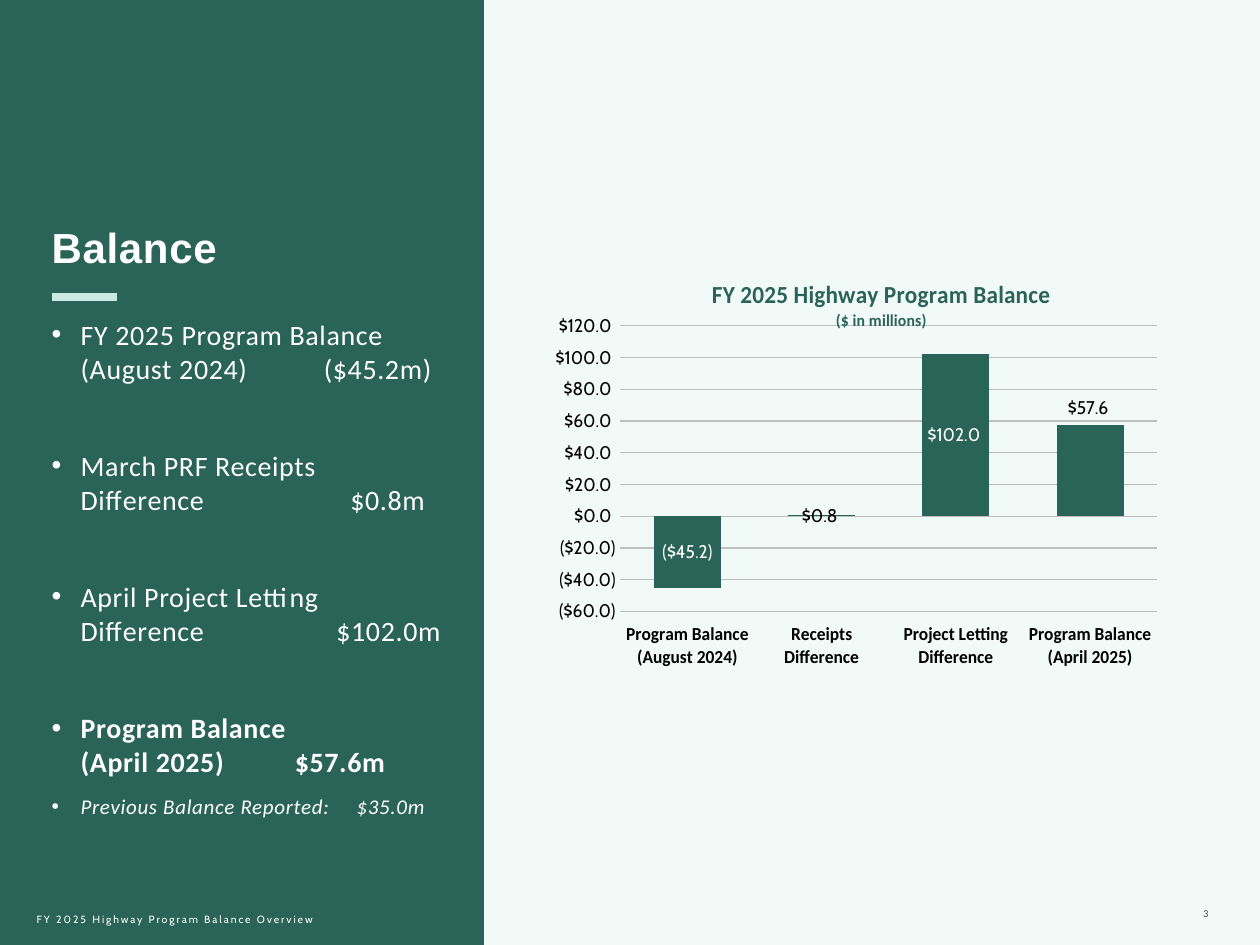
from dataclasses import dataclass
from lxml.etree import SubElement as Sub
from pptx import Presentation
from pptx.chart.data import CategoryChartData as Data
from pptx.dml.color import RGBColor as RGB
from pptx.enum.chart import XL_CHART_TYPE as Kind
from pptx.enum.chart import XL_LABEL_POSITION as Spot
from pptx.enum.chart import XL_TICK_LABEL_POSITION as Tick
from pptx.enum.chart import XL_TICK_MARK as Mark
from pptx.enum.shapes import MSO_CONNECTOR as Link
from pptx.enum.shapes import MSO_SHAPE as Form
from pptx.enum.text import MSO_ANCHOR as Anchor
from pptx.enum.text import MSO_AUTO_SIZE as Fit
from pptx.enum.text import PP_ALIGN as Align
from pptx.oxml import parse_xml
from pptx.oxml.ns import nsdecls, qn
from pptx.util import Inches, Pt


@dataclass(frozen=True)
class Theme:
    """Colours, fonts and type sizes of the slide."""
    green: RGB = RGB(0x2A, 0x63, 0x57)
    mint: RGB = RGB(0xCB, 0xE9, 0xE3)
    pale: RGB = RGB(0xF2, 0xFA, 0xF8)
    white: RGB = RGB(0xFF, 0xFF, 0xFF)
    black: RGB = RGB(0, 0, 0)
    gray: RGB = RGB(0xBF, 0xBF, 0xBF)
    dark: RGB = RGB(0x4D, 0x4D, 0x4F)
    head: str = "Arial"
    body: str = "Calibri"
    data: str = "Cabin"
    title: float = 24
    text: float = 16
    note: float = 12
    axis: float = 10.5
    small: float = 6
    main: float = 14
    sub: float = 9.5


T = Theme()
MONEY = r'"$"#,##0.0_);\("$"#,##0.0\)'
ROWS = [
    ("FY 2025 Program Balance\v(August 2024)\t($45.2m)", 2.16),
    ("March PRF Receipts\vDifference\t$0.8m", 2.37),
    ("April Project Letting\vDifference\t$102.0m", 2.26),
    ("Program Balance\v(April 2025)\t$57.6m", 1.93),
    ("Previous Balance Reported:\t$35.0m", 2.42),
]
BARS = {
    "Program Balance (August 2024)": -45.2,
    "Receipts Difference": 0.8,
    "Project Letting Difference": 102,
    "Program Balance (April 2025)": 57.6,
}


def style(font, name, size, color, bold=False):
    """Set the face, size, colour and weight of a font."""
    font.name, font.size, font.bold = name, Pt(size), bold
    font.color.rgb = color


def track(para, gap):
    """Set letter spacing of a paragraph in points."""
    para._p.pPr.find(qn("a:defRPr")).set("spc", str(round(gap * 100)))


def clear(frame, anchor, edge=0):
    """Remove side insets, wrap the text and set its anchor."""
    frame.margin_left = frame.margin_right = 0
    frame.margin_top = frame.margin_bottom = Inches(edge)
    frame.word_wrap, frame.auto_size = True, Fit.NONE
    frame.vertical_anchor = anchor


def place(shape, box):
    """Move a shape to a box in inches."""
    shape.left, shape.top, shape.width, shape.height = map(Inches, box)


def bullet(para, stop):
    """Give a paragraph a hanging bullet and one tab stop."""
    props = para._p.get_or_add_pPr()
    props.set("marL", str(Inches(0.23)))
    props.set("indent", str(-Inches(0.23)))
    Sub(props, qn("a:buFont"), typeface="Arial")
    Sub(props, qn("a:buChar"), char="•")
    tabs = Sub(props, qn("a:tabLst"))
    Sub(tabs, qn("a:tab"), pos=str(Inches(stop)), algn="l")


def panel(slide, box):
    """Draw the green side panel behind the title."""
    rect = slide.shapes.add_shape(Form.RECTANGLE, *map(Inches, box))
    rect.shadow.inherit = False
    rect.fill.solid()
    rect.fill.fore_color.rgb = T.green
    rect.line.fill.background()
    slide.shapes._spTree.insert(2, rect._element)


def heading(slide, box):
    """Place the title and the short rule under it."""
    title = slide.shapes.title
    place(title, box)
    clear(title.text_frame, Anchor.TOP)
    para = title.text_frame.paragraphs[0]
    para.text, para.alignment = "Balance", Align.LEFT
    style(para.font, T.head, T.title, T.white, True)
    track(para, 0.4)
    left, y = Inches(box[0]), Inches(box[1] + 0.6)
    rule = slide.shapes.add_connector(Link.STRAIGHT, left, y, left + Inches(0.52), y)
    rule.line.color.rgb, rule.line.width = T.mint, Pt(4.5)
    Sub(rule._element.spPr, qn("a:effectLst"))


def points(slide, box):
    """Write the bulleted balance lines."""
    frame = slide.shapes.add_textbox(*map(Inches, box)).text_frame
    clear(frame, Anchor.TOP)
    last = len(ROWS) - 1
    for i, (text, stop) in enumerate(ROWS):
        para = frame.add_paragraph() if i else frame.paragraphs[0]
        para.text = text
        para.space_before = Pt(0 if i == 0 else 9 if i == last else 36.5)
        bullet(para, stop)
        size = T.note if i == last else T.text
        style(para.font, T.body, size, T.white, i == last - 1)
        para.font.italic = i == last
        track(para, 0.4)


def label(slide, box, text, face, color, align, anchor):
    """Write one small line at the foot of the slide."""
    frame = slide.shapes.add_textbox(*map(Inches, box)).text_frame
    clear(frame, anchor, 0.05)
    para = frame.paragraphs[0]
    para.text, para.alignment = text, align
    style(para.font, face, T.small, color)
    track(para, 1.1)


def axes(chart):
    """Format both axes and the grid."""
    cat, val = chart.category_axis, chart.value_axis
    for axis, face, bold in ((cat, T.body, True), (val, T.data, False)):
        axis.major_tick_mark = axis.minor_tick_mark = Mark.NONE
        style(axis.tick_labels.font, face, T.axis, T.black, bold)
    cat.tick_label_position = Tick.LOW
    val.minimum_scale, val.maximum_scale, val.major_unit = -60, 120, 20
    val.tick_labels.number_format = MONEY
    val.tick_labels.number_format_is_linked = False
    val.format.line.fill.background()
    for line in (cat.format.line, val.major_gridlines.format.line):
        line.color.rgb, line.width = T.gray, Pt(0.75)


def graph(slide, box):
    """Place the column chart of the balance."""
    data = Data(number_format=MONEY)
    data.categories = list(BARS)
    data.add_series("Series 1", list(BARS.values()))
    chart = slide.shapes.add_chart(Kind.COLUMN_CLUSTERED, *map(Inches, box), data).chart
    style(chart.font, T.data, 10, T.black)
    chart.has_legend = False
    frame = chart.chart_title.text_frame
    frame.text = "FY 2025 Highway Program Balance\n($ in millions)"
    for para, size in zip(frame.paragraphs, (T.main, T.sub)):
        style(para.font, T.body, size, T.green, True)
    axes(chart)
    plot = chart.plots[0]
    plot.gap_width, plot.overlap, plot.vary_by_categories = 100, -24, False
    bars = plot.series[0]
    bars.invert_if_negative = False
    bars.format.fill.solid()
    bars.format.fill.fore_color.rgb = T.green
    tags = bars.data_labels
    tags.show_value, tags.position = True, Spot.CENTER
    tags.number_format, tags.number_format_is_linked = MONEY, False
    style(tags.font, T.data, T.axis, T.white)
    for i, spot in ((1, Spot.CENTER), (3, Spot.OUTSIDE_END)):
        tag = bars.points[i].data_label
        style(tag.font, T.data, T.axis, T.black)
        tag.position = spot
    area = chart._chartSpace.chart.plotArea
    for old in area.findall(qn("c:layout")):
        area.remove(old)
    parts = zip("xywh", (0.056, 0.153, 0.913, 0.648))
    sizes = "".join(f'<c:{k} val="{v}"/>' for k, v in parts)
    modes = '<c:layoutTarget val="inner"/><c:xMode val="edge"/><c:yMode val="edge"/>'
    area.insert(0, parse_xml(
        f'<c:layout {nsdecls("c")}><c:manualLayout>{modes}{sizes}</c:manualLayout></c:layout>'))


def main():
    """Build and save the slide."""
    deck = Presentation()
    deck.slide_width, deck.slide_height = Inches(10), Inches(7.5)
    slide = deck.slides.add_slide(deck.slide_layouts[5])
    slide.background.fill.solid()
    slide.background.fill.fore_color.rgb = T.pale
    panel(slide, (0, 0, 3.84, 7.5))
    heading(slide, (0.41, 1.76, 3.12, 0.45))
    points(slide, (0.41, 2.52, 3.12, 4.07))
    graph(slide, (4.41, 2.05, 4.92, 3.5))
    label(slide, (0.29, 7.15, 2.61, 0.3), "FY 2025 Highway Program Balance Overview",
          T.data, T.white, Align.LEFT, Anchor.MIDDLE)
    label(slide, (8.62, 6.95, 0.97, 0.4), "3", T.body, T.dark, Align.RIGHT, Anchor.BOTTOM)
    deck.save("out.pptx")


if __name__ == "__main__":
    main()
